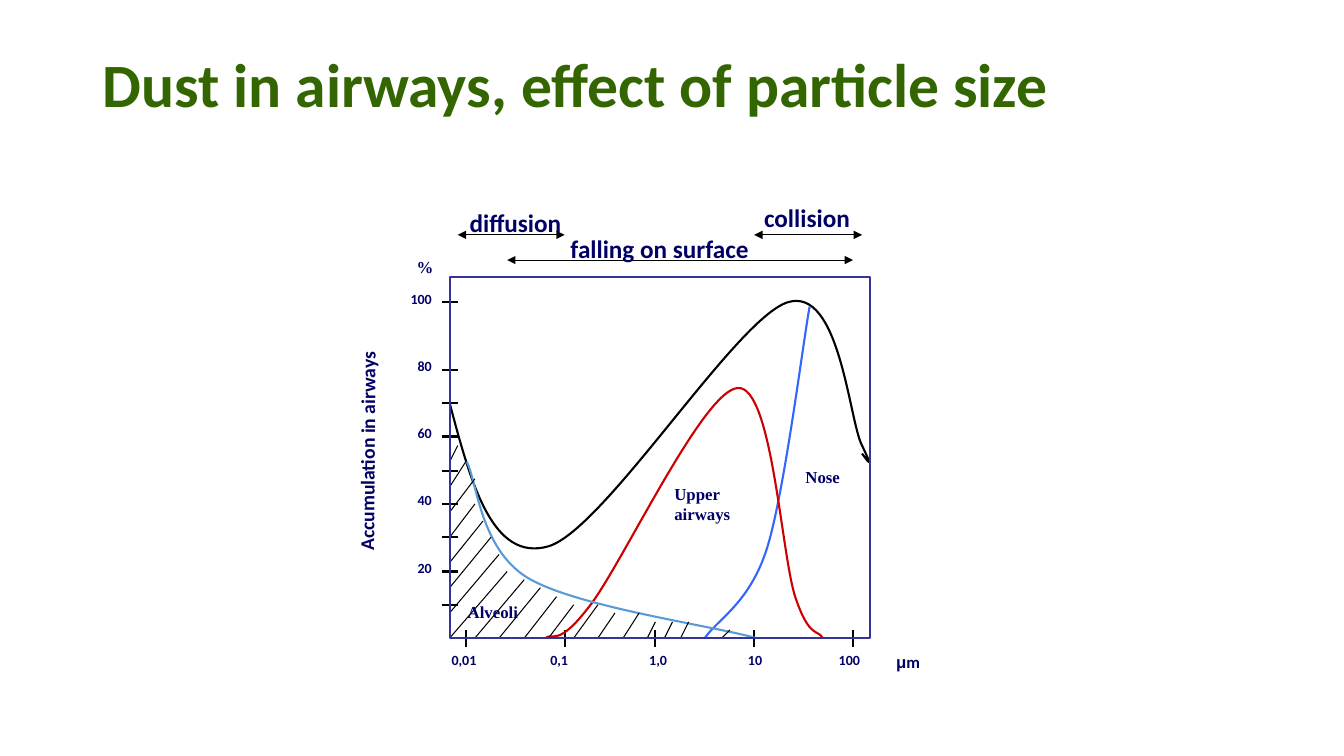
from dataclasses import dataclass

from lxml.etree import SubElement
from pptx import Presentation
from pptx.dml.color import RGBColor as Rgb
from pptx.enum.shapes import MSO_CONNECTOR as Link, MSO_SHAPE as Form
from pptx.enum.text import MSO_ANCHOR as Anchor, PP_ALIGN as Align
from pptx.oxml.ns import qn
from pptx.util import Pt

PX = 9144


@dataclass(frozen=True)
class Theme:
    black: str = "000000"
    green: str = "336600"
    navy: str = "000066"
    frame: str = "333399"
    blue: str = "3366FF"
    red: str = "CC0000"
    sky: str = "5B9BD5"
    sans: str = "Calibri"
    serif: str = "Times New Roman"
    greek: str = "Arial"
    title: int = 44
    zone: int = 18
    axis: int = 14
    label: int = 12
    tick: int = 10
    thin: float = 0.75
    thick: float = 1.5


class Pen:
    def __init__(self, slide, theme):
        self.shapes = slide.shapes
        self.theme = theme

    def ink(self, line, color, width):
        line.color.rgb = Rgb.from_string(color)
        line.width = Pt(width)

    def text(self, box, runs, size, color=None, align=Align.LEFT,
             anchor=Anchor.TOP, turn=0, wrap=True, space=None):
        shape = self.shapes.add_textbox(*(n * PX for n in box))
        shape.rotation = turn
        frame = shape.text_frame
        frame.word_wrap = wrap
        frame.vertical_anchor = anchor
        para = frame.paragraphs[0]
        para.alignment = align
        para.line_spacing = space
        for words, face in runs:
            run = para.add_run()
            run.text = words
            run.font.name = face
            run.font.size = Pt(size)
            run.font.bold = True
            run.font.color.rgb = Rgb.from_string(color or self.theme.navy)

    def line(self, x1, y1, x2, y2, width, arrows=False):
        link = self.shapes.add_connector(
            Link.STRAIGHT, *(n * PX for n in (x1, y1, x2, y2)))
        self.ink(link.line, self.theme.black, width)
        props = link._element.spPr
        if arrows:
            for end in ("a:headEnd", "a:tailEnd"):
                SubElement(props.find(qn("a:ln")), qn(end), type="triangle")
        SubElement(props, qn("a:effectLst"))

    def plain(self, shape, color):
        shape.shadow.inherit = False
        shape.fill.background()
        self.ink(shape.line, color, self.theme.thick)

    def rect(self, box, color):
        shape = self.shapes.add_shape(
            Form.RECTANGLE, *(n * PX for n in box))
        self.plain(shape, color)

    def curve(self, knots, color):
        form = self.shapes.build_freeform(*knots[0], scale=PX)
        form.add_line_segments(knots[1:], close=False)
        shape = form.convert_to_shape()
        trace = next(shape._element.iter(qn("a:path")))
        legs = trace.findall(qn("a:lnTo"))
        for i in range(0, len(legs), 3):
            bend = SubElement(trace, qn("a:cubicBezTo"))
            for leg in legs[i:i + 3]:
                bend.append(leg[0])
                trace.remove(leg)
        self.plain(shape, color)


def main():
    deck = Presentation()
    deck.slide_width, deck.slide_height = 1333 * PX, 750 * PX
    look = Theme()
    pen = Pen(deck.slides.add_slide(deck.slide_layouts[6]), look)
    left, top, wide, floor = 446, 275, 417, 633

    pen.text((92, 40, 1150, 93),
             [("Dust in airways, effect of particle size", look.sans)],
             look.title, look.green, anchor=Anchor.MIDDLE, space=0.9)

    for x1, x2, y in ((454, 560, 233), (748, 855, 233), (503, 846, 258)):
        pen.line(x1, y, x2, y, look.thin, arrows=True)

    pen.text((216, 431, 296, 33), [("Accumulation in airways", look.sans)],
             look.axis, align=Align.CENTER, turn=270.4)
    pen.text((397, 250, 49, 30), [("%", look.serif)],
             look.label, align=Align.CENTER)
    pen.text((879, 642, 57, 30), [("μ", look.greek), ("m", look.sans)],
             look.label)

    for value in (100, 80, 70, 60, 50, 40, 30, 20, 10):
        y = round(300 + (100 - value) * 10 / 3)
        pen.line(438, y, 454, y, look.thick)
        if value % 20 == 0:
            pen.text((373, y - 17, 65, 27), [(str(value), look.sans)],
                     look.tick, align=Align.RIGHT)

    for name, x, start in (("0,01", 462, 438), ("0,1", 560, 536),
                           ("1,0", 650, 634), ("10", 748, 732),
                           ("100", 846, 822)):
        pen.line(x, 642, x, 625, look.thick)
        pen.text((start, 641, 49, 27), [(name, look.sans)], look.tick)

    total = ((446, 400), (467, 479), (488, 558), (544, 542),
             (600, 525), (729, 317), (781, 300),
             (833, 283), (842, 417), (855, 442),
             (867, 467), (861, 458), (855, 450))
    nose = ((803, 304), (796, 343), (778, 488), (761, 543),
            (744, 598), (712, 614), (699, 633))
    upper = ((541, 633), (549, 627), (553, 643), (585, 601),
             (617, 560), (698, 386), (732, 385),
             (766, 383), (775, 552), (789, 593),
             (803, 634), (811, 624), (816, 633))
    lungs = ((463, 458), (473, 477), (476, 544), (523, 573),
             (571, 602), (703, 620), (750, 633))
    for knots, color in ((total, look.black), (nose, look.blue),
                         (upper, look.red), (lungs, look.sky)):
        pen.curve(knots, color)

    wall = ((454, 442), (462, 458), (471, 475), (471, 500),
            (479, 517), (487, 533), (495, 550), (503, 567))
    for i, (x, y) in enumerate(wall):
        pen.line(x, y, left, 458 + 25 * i, look.thin)
    for x, y, foot in ((520, 575, 471), (536, 583, 495), (552, 592, 520),
                       (569, 600, 544), (593, 600, 569), (610, 608, 593),
                       (634, 608, 618), (650, 617, 642), (667, 617, 659),
                       (683, 617, 675), (724, 625, 716)):
        pen.line(x, y, foot, floor, look.thin)

    for name, box in (("Alveoli", (454, 592, 139, 30)),
                      ("Upper airways", (659, 475, 106, 50)),
                      ("Nose", (789, 458, 65, 30))):
        pen.text(box, [(name, look.serif)], look.label)

    pen.rect((left, top, wide, floor - top), look.frame)

    for name, box in (("diffusion", (456, 201, 113, 40)),
                      ("falling on surface", (556, 227, 198, 40)),
                      ("collision", (748, 196, 106, 40))):
        pen.text(box, [(name, look.sans)], look.zone, wrap=False)

    deck.save("out.pptx")


if __name__ == "__main__":
    main()
